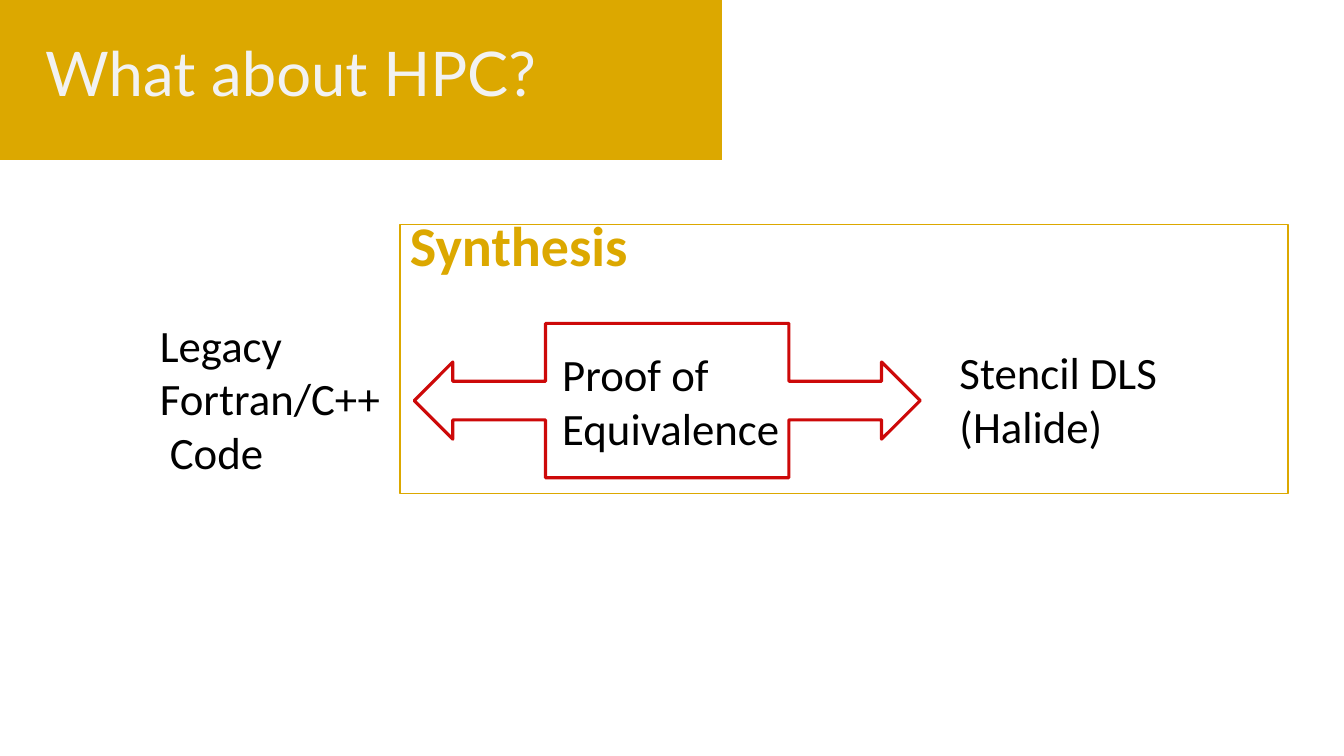
from pptx import Presentation
from pptx.dml.color import RGBColor
from pptx.enum.shapes import MSO_SHAPE
from pptx.enum.text import MSO_ANCHOR, MSO_AUTO_SIZE
from pptx.util import Cm, Pt

COLORS = {
    "gold": "DCA800",
    "red": "CD0909",
    "white": "FFFFFF",
    "title": "F2F2F2",
    "text": "000000",
}


def rgb(name):
    return RGBColor.from_string(COLORS[name])


class SlideBuilder:
    def __init__(self, slide, body_font="Calibri", body_size=32):
        self.slide = slide
        self.body_font = body_font
        self.body_size = body_size

    def shape(self, preset, box, fill, line, line_width):
        shape = self.slide.shapes.add_shape(preset, *map(Cm, box))
        shape.shadow.inherit = False
        shape.fill.solid()
        shape.fill.fore_color.rgb = rgb(fill)
        shape.line.color.rgb = rgb(line)
        shape.line.width = Pt(line_width)
        return shape

    def label(self, lines, box, size=None, color="text", bold=False):
        """Add left-aligned text that grows with its content and does not wrap."""
        label = self.slide.shapes.add_textbox(*map(Cm, box))
        frame = label.text_frame
        frame.text = "\n".join(lines)
        frame.word_wrap = False
        frame.auto_size = MSO_AUTO_SIZE.SHAPE_TO_FIT_TEXT
        for paragraph in frame.paragraphs:
            self.style(paragraph, self.body_font, size or self.body_size, color, bold)
        return frame

    def title(self, text, box):
        frame = self.slide.shapes.add_textbox(*map(Cm, box)).text_frame
        frame.text = text
        frame.word_wrap = True
        frame.vertical_anchor = MSO_ANCHOR.MIDDLE
        frame.paragraphs[0].line_spacing = 0.9
        self.style(frame.paragraphs[0], "Lato", 44, "title")

    def style(self, paragraph, font, size, color, bold=False):
        for run in paragraph.runs:
            run.font.name = font
            run.font.size = Pt(size)
            run.font.bold = bold
            run.font.color.rgb = rgb(color)


def main():
    deck = Presentation()
    deck.slide_width, deck.slide_height = Cm(33.87), Cm(19.05)
    builder = SlideBuilder(deck.slides.add_slide(deck.slide_layouts[6]))

    process = MSO_SHAPE.FLOWCHART_PROCESS
    builder.shape(process, (-0.03, -0.05, 18.26, 4.11), "gold", "white", 1.5)
    builder.title("What about HPC?", (0.89, 0.08, 17.35, 3.68))

    builder.shape(process, (10.08, 5.66, 22.38, 6.78), "white", "gold", 1)
    builder.shape(MSO_SHAPE.LEFT_RIGHT_ARROW_CALLOUT, (10.44, 8.15, 12.75, 3.89),
                  "white", "red", 2.25)

    legacy = builder.label(["Legacy", "Fortran/C++", "Code"], (3.78, 7.87, 6.12, 4.37))
    legacy.paragraphs[2]._p.get_or_add_pPr().set("marL", str(Cm(0.25)))
    builder.label(["Stencil DLS", "(Halide)"], (23.93, 8.56, 5.56, 3))
    builder.label(["Proof of", "Equivalence"], (13.92, 8.61, 6.05, 3))
    builder.label(["Synthesis"], (10.08, 5.18, 6.07, 1.96), 40, "gold", True)

    deck.save("out.pptx")


if __name__ == "__main__":
    main()
